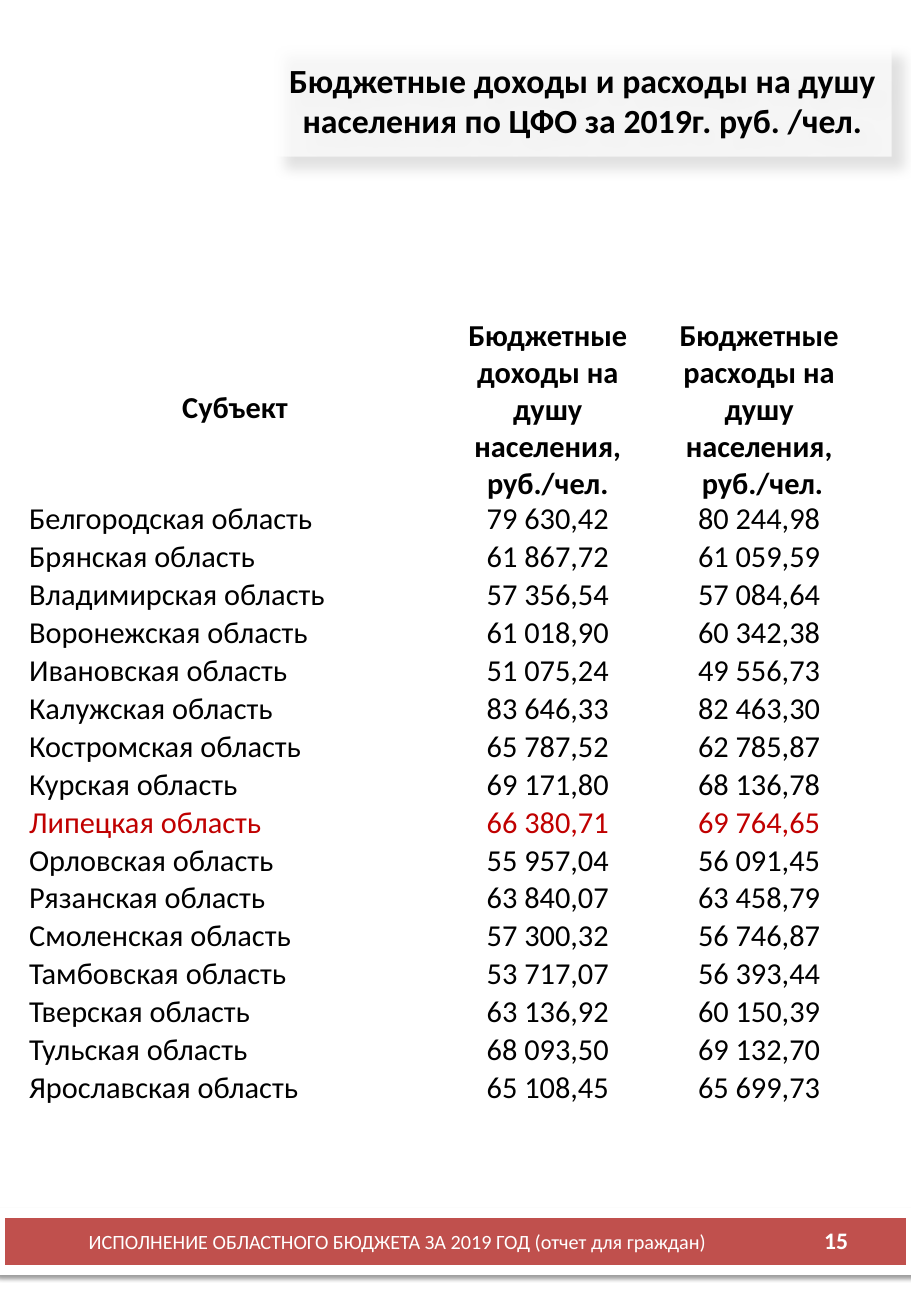
from lxml import etree
from pptx import Presentation
from pptx.dml.color import RGBColor
from pptx.enum import shapes, text
from pptx.oxml import ns
from pptx.util import Inches, Pt

BLACK, WHITE, BRICK, RED = "000000", "FFFFFF", "C0504D", "C00000"
CENTER, LEFT, RIGHT = text.PP_ALIGN.CENTER, text.PP_ALIGN.LEFT, text.PP_ALIGN.RIGHT
HEADINGS = (
    "Субъект",
    "Бюджетные доходы на душу населения, руб./чел.",
    "Бюджетные расходы на душу населения,\v руб./чел.",
)
REGIONS = (
    ("Белгородская", "79 630,42", "80 244,98"),
    ("Брянская", "61 867,72", "61 059,59"),
    ("Владимирская", "57 356,54", "57 084,64"),
    ("Воронежская", "61 018,90", "60 342,38"),
    ("Ивановская", "51 075,24", "49 556,73"),
    ("Калужская", "83 646,33", "82 463,30"),
    ("Костромская", "65 787,52", "62 785,87"),
    ("Курская", "69 171,80", "68 136,78"),
    ("Липецкая", "66 380,71", "69 764,65"),
    ("Орловская", "55 957,04", "56 091,45"),
    ("Рязанская", "63 840,07", "63 458,79"),
    ("Смоленская", "57 300,32", "56 746,87"),
    ("Тамбовская", "53 717,07", "56 393,44"),
    ("Тверская", "63 136,92", "60 150,39"),
    ("Тульская", "68 093,50", "69 132,70"),
    ("Ярославская", "65 108,45", "65 699,73"),
)
HIGHLIGHT = "Липецкая"


def paint(color_format, color):
    """Set a colour from a hex string."""
    color_format.rgb = RGBColor.from_string(color)


def child(parent, tag, **attributes):
    """Append a DrawingML element and return it."""
    element = etree.SubElement(parent, ns.qn("a:" + tag))
    for key, value in attributes.items():
        element.set(key, str(value))
    return element


def write(frame, words, size=18, color=BLACK, bold=False, align=CENTER):
    """Fill a text frame with one formatted paragraph."""
    frame.word_wrap = True
    paragraph = frame.paragraphs[0]
    paragraph.text = words
    paragraph.alignment = align
    for run in paragraph.runs:
        run.font.name, run.font.size, run.font.bold = "Calibri", Pt(size), bold
        paint(run.font.color, color)


def add_panel(slide, left, top, width, height, fill, shadow):
    """Add a borderless rectangle with shadow (alpha, blur, distance, angle)."""
    panel = slide.shapes.add_shape(
        shapes.MSO_SHAPE.RECTANGLE, Inches(left), Inches(top), Inches(width), Inches(height))
    panel.shadow.inherit = False
    panel.fill.solid()
    paint(panel.fill.fore_color, fill)
    panel.line.fill.background()
    alpha, blur, distance, angle = shadow
    effects = panel._element.spPr.find(ns.qn("a:effectLst"))
    outer = child(effects, "outerShdw", blurRad=Pt(blur), dist=Pt(distance),
                  dir=angle * 60000, algn="tl", rotWithShape=0)
    child(child(outer, "srgbClr", val=BLACK), "alpha", val=alpha * 1000)
    return panel


def add_label(slide, left, top, width, height, words, **style):
    """Add a vertically centred text box."""
    label = slide.shapes.add_textbox(Inches(left), Inches(top), Inches(width), Inches(height))
    label.text_frame.vertical_anchor = text.MSO_ANCHOR.MIDDLE
    write(label.text_frame, words, **style)


def add_title(slide, left, top, width, height):
    """Add the translucent title panel."""
    title = add_panel(slide, left, top, width, height, WHITE, (16, 7, 10, 45))
    tint = title._element.spPr.find(ns.qn("a:solidFill"))[0]
    child(tint, "alpha", val=70000)
    title.text_frame.vertical_anchor = text.MSO_ANCHOR.MIDDLE
    write(title.text_frame,
          "Бюджетные доходы и расходы на душу населения по ЦФО за 2019г. руб. /чел.",
          size=20, bold=True)


def add_footer(slide, left, top, width, height):
    """Add the footer band with the report name and page number."""
    band = add_panel(slide, left, top, width, height, BRICK, (38, 3.1, 1.6, 90))
    band.line.width = Pt(6)
    band.line.fill.solid()
    paint(band.line.color, WHITE)
    add_label(slide, left + 0.36, top + 0.08, 5.83, 0.31,
              "ИСПОЛНЕНИЕ ОБЛАСТНОГО БЮДЖЕТА ЗА 2019 ГОД (отчет для граждан)",
              size=12, color=WHITE)
    add_label(slide, left + 6.43, top + 0.08, 0.65, 0.29, "15",
              size=14, color=WHITE, bold=True, align=RIGHT)


def fill_cell(cell, words, **style):
    """Write a table cell with thin white borders and no fill."""
    cell.margin_left = cell.margin_right = cell.margin_top = Inches(0.01)
    cell.margin_bottom = 0
    cell.vertical_anchor = text.MSO_ANCHOR.MIDDLE
    write(cell.text_frame, words, **style)
    properties = cell._tc.get_or_add_tcPr()
    for side in ("lnL", "lnR", "lnT", "lnB"):
        border = child(properties, side, w=Pt(1))
        child(child(border, "solidFill"), "srgbClr", val=WHITE)
    cell.fill.background()


def add_region_table(slide, left, top, width, height):
    """Add the table of income and spending per head by region."""
    header_height, amount_width = 1.3, 1.74
    table = slide.shapes.add_table(
        len(REGIONS) + 1, len(HEADINGS),
        Inches(left), Inches(top), Inches(width), Inches(height)).table
    table.first_row = table.horz_banding = False
    for column, size in zip(table.columns, (width - 2 * amount_width, amount_width, amount_width)):
        column.width = Inches(size)
    for row in table.rows:
        row.height = Inches((height - header_height) / len(REGIONS))
    table.rows[0].height = Inches(header_height)
    for column, heading in enumerate(HEADINGS):
        fill_cell(table.cell(0, column), heading, bold=True)
    for row, (region, *amounts) in enumerate(REGIONS, 1):
        color = RED if region == HIGHLIGHT else BLACK
        fill_cell(table.cell(row, 0), f"{region} область", color=color, align=LEFT)
        for column, amount in enumerate(amounts, 1):
            fill_cell(table.cell(row, column), amount, color=color)


def main():
    """Build and save the budget slide."""
    deck = Presentation()
    deck.slide_width, deck.slide_height = Inches(7.5), Inches(10.83)
    slide = deck.slides.add_slide(deck.slide_layouts[6])
    slide.background.fill.solid()
    paint(slide.background.fill.fore_color, WHITE)
    add_footer(slide, 0, 9.98, 7.5, 0.47)
    add_title(slide, 2.25, 0.36, 5.09, 0.93)
    add_region_table(slide, 0.23, 2.6, 6.89, 6.3)
    deck.save("out.pptx")


if __name__ == "__main__":
    main()
